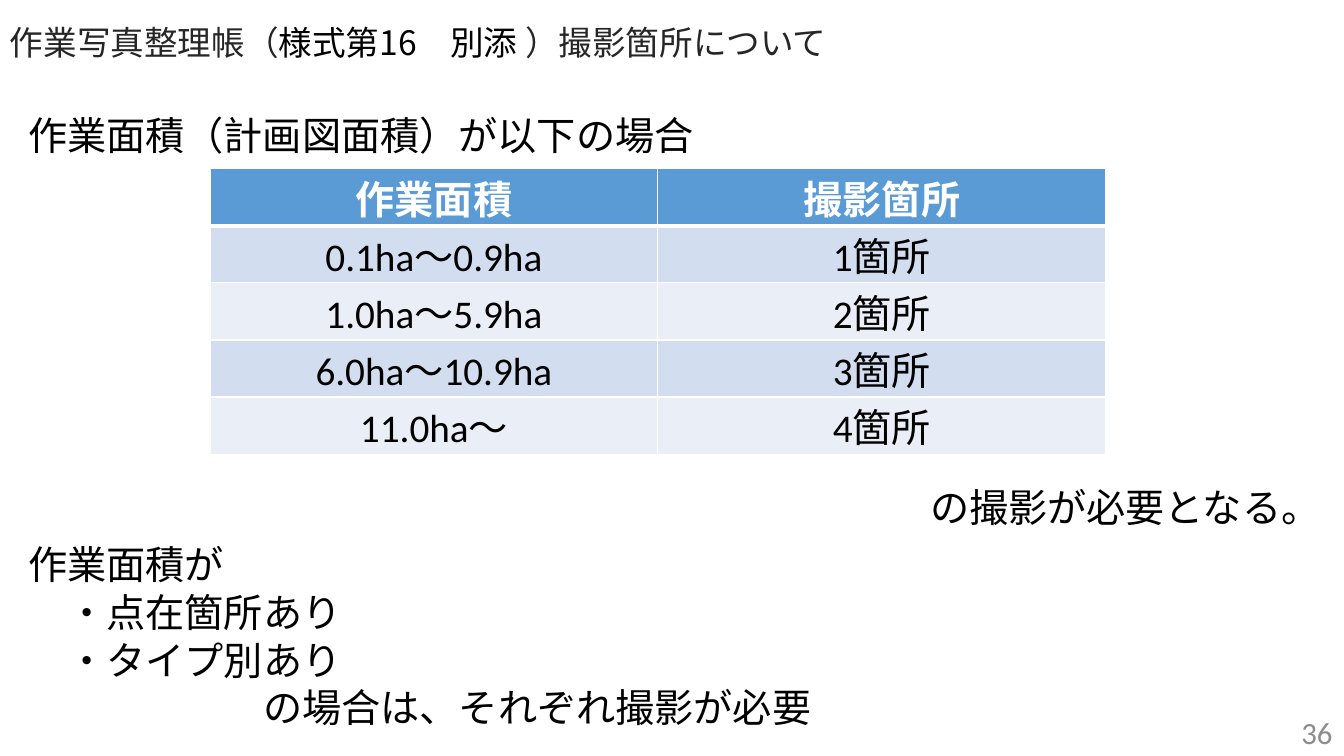
from lxml import etree
from pptx import Presentation
from pptx.dml.color import RGBColor
from pptx.enum.text import MSO_ANCHOR, PP_ALIGN
from pptx.oxml.ns import qn
from pptx.util import Cm, Pt

LEFT, CENTER, RIGHT = PP_ALIGN.LEFT, PP_ALIGN.CENTER, PP_ALIGN.RIGHT
TOP, MIDDLE, BOTTOM = MSO_ANCHOR.TOP, MSO_ANCHOR.MIDDLE, MSO_ANCHOR.BOTTOM
JAPANESE, LATIN = "Noto Sans CJK JP", "Calibri"
BLACK, DARK, GREY, WHITE = "000000", "262626", "8C8C8C", "FFFFFF"
HEADER_FILL, BAND_FILLS = "5B9BD5", ("D2DEEF", "EAEFF7")
BODY_SIZE = 28

TITLE = [("作業写真整理帳（", DARK), ("様式第16　別添 ", BLACK), ("）撮影箇所について", DARK)]
INTRO = "作業面積（計画図面積）が以下の場合"
CONCLUSION = "の撮影が必要となる。"
# text, indent in full-width characters
CONDITIONS = [
    ("作業面積が", 0),
    ("・点在箇所あり", 1),
    ("・タイプ別あり", 1),
    ("の場合は、それぞれ撮影が必要", 6),
]
AREA_TABLE = [
    ("作業面積", "撮影箇所"),
    ("0.1ha～0.9ha", "1箇所"),
    ("1.0ha～5.9ha", "2箇所"),
    ("6.0ha～10.9ha", "3箇所"),
    ("11.0ha～", "4箇所"),
]
PAGE_NUMBER = "36"


def rgb(hex_color):
    return RGBColor.from_string(hex_color)


def format_run(r, size, color, font=JAPANESE, bold=False):
    r.font.size, r.font.bold, r.font.name = Pt(size), bold, font
    r.font.color.rgb = rgb(color)
    etree.SubElement(r._r.get_or_add_rPr(), qn("a:ea")).set("typeface", JAPANESE)


def add_text(slide, box, lines, size, font=JAPANESE, align=LEFT, anchor=TOP):
    """Add a text box; each line is (list of (text, color), indent in characters)."""
    tf = slide.shapes.add_textbox(*(Cm(v) for v in box)).text_frame
    tf.word_wrap, tf.vertical_anchor = True, anchor
    for i, (runs, indent) in enumerate(lines):
        p = tf.add_paragraph() if i else tf.paragraphs[0]
        p.alignment = align
        p.line_spacing = Pt(round(size * 1.21))
        if indent:
            p._p.get_or_add_pPr().set("marL", str(Pt(size * indent)))
        for text, color in runs:
            r = p.add_run()
            r.text = text
            format_run(r, size, color, font)


def set_borders(cell, widths):
    """Give the cell white borders, widths in points for left, right, top, bottom."""
    tcPr = cell._tc.get_or_add_tcPr()
    for i, (side, width) in enumerate(zip("LRTB", widths)):
        ln = etree.Element(qn(f"a:ln{side}"), w=str(Pt(width)))
        fill = etree.SubElement(ln, qn("a:solidFill"))
        etree.SubElement(fill, qn("a:srgbClr")).set("val", WHITE)
        tcPr.insert(i, ln)


def add_area_table(slide, left, top, width, row_height):
    rows, cols = len(AREA_TABLE), len(AREA_TABLE[0])
    table = slide.shapes.add_table(
        rows, cols, Cm(left), Cm(top), Cm(width), Cm(row_height * rows)).table
    for i, texts in enumerate(AREA_TABLE):
        header = i == 0
        for j, text in enumerate(texts):
            cell = table.cell(i, j)
            cell.margin_top = cell.margin_bottom = 0
            cell.vertical_anchor = BOTTOM
            cell.fill.solid()
            cell.fill.fore_color.rgb = rgb(HEADER_FILL if header else BAND_FILLS[(i - 1) % 2])
            set_borders(cell, (1, 1, 3 if i == 1 else 1, 3 if header else 1))
            p = cell.text_frame.paragraphs[0]
            p.text, p.alignment = text, CENTER
            format_run(p.runs[0], BODY_SIZE, WHITE if header else BLACK, LATIN, header)


def main():
    prs = Presentation()
    prs.slide_width, prs.slide_height = Cm(33.87), Cm(19.05)
    slide = prs.slides.add_slide(prs.slide_layouts[6])
    add_text(slide, (26.21, 17.93, 7.62, 1.02), [([(PAGE_NUMBER, GREY)], 0)],
             22, LATIN, RIGHT, MIDDLE)
    add_text(slide, (0, 0.41, 33.87, 1.27), [(TITLE, 0)], 24)
    add_text(slide, (0.46, 2.67, 19.23, 1.45), [([(INTRO, BLACK)], 0)], BODY_SIZE)
    add_area_table(slide, 5.29, 4.25, 22.58, 1.44)
    add_text(slide, (23.19, 12.04, 10.59, 1.45), [([(CONCLUSION, BLACK)], 0)], BODY_SIZE)
    add_text(slide, (0.46, 13.49, 30.53, 5.05),
             [([(text, BLACK)], indent) for text, indent in CONDITIONS], BODY_SIZE)
    prs.save("out.pptx")


if __name__ == "__main__":
    main()
